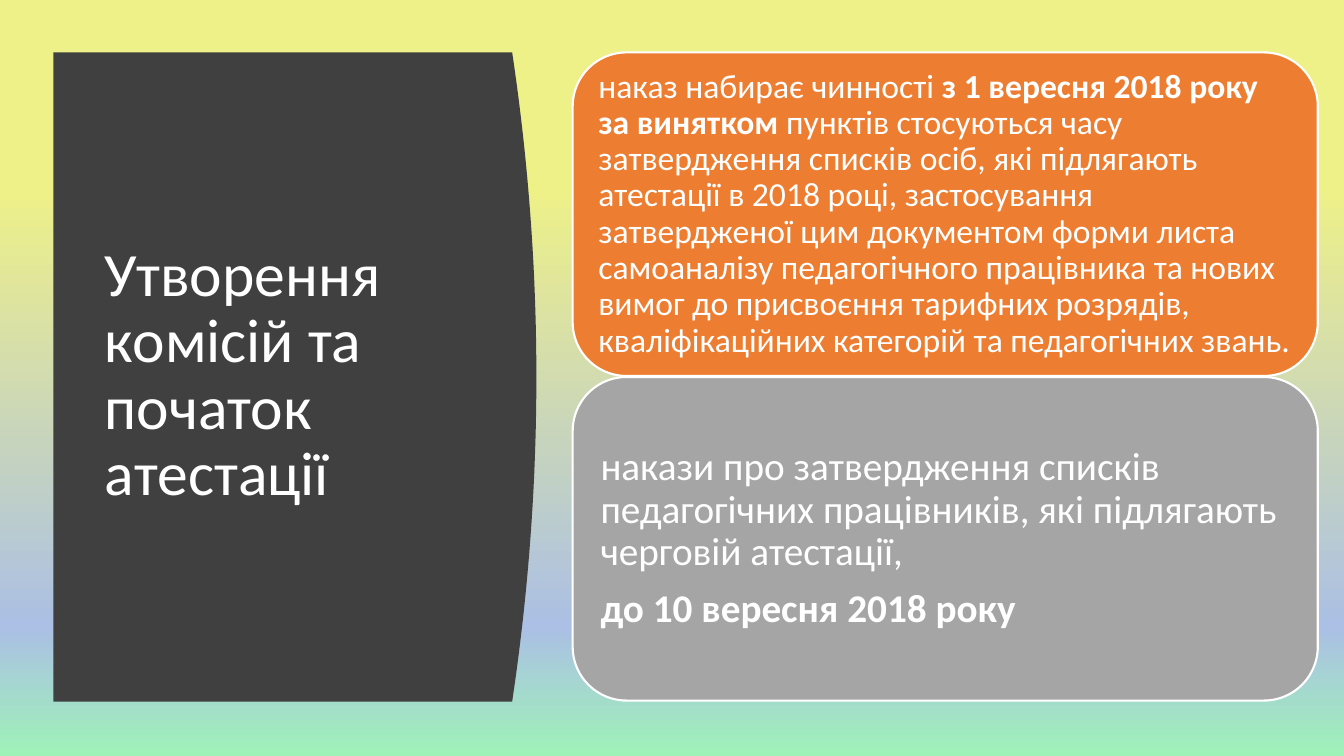
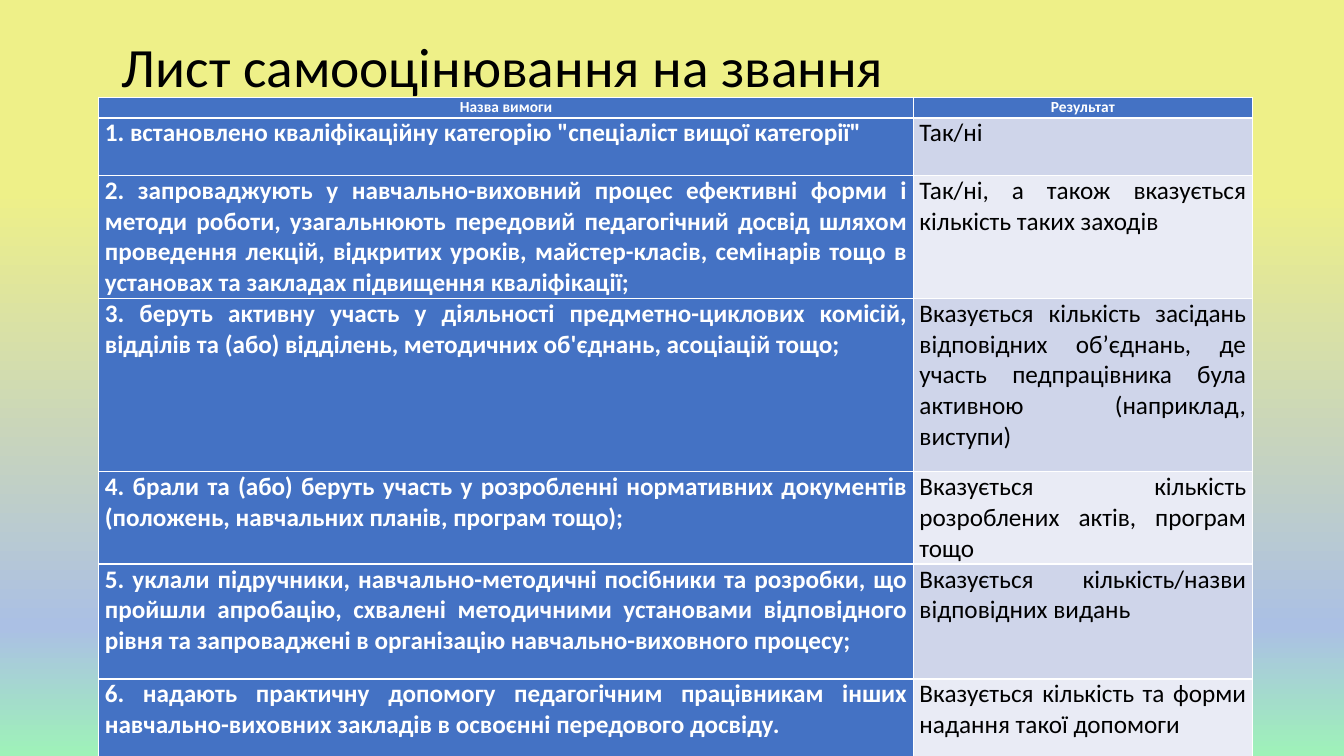
"""Build two slides on teacher attestation: commissions and the self-assessment sheet."""
from lxml import etree
from pptx import Presentation
from pptx.dml.color import RGBColor
from pptx.enum import shapes, text
from pptx.oxml import ns
from pptx.util import Inches, Pt

FONT = "Calibri"
WHITE, BLACK, DARK = "FFFFFF", "000000", "404040"
ORANGE, GREY, BLUE = "ED7D31", "A5A5A5", "4472C4"
BANDS = ["CFD5EA", "E9EBF5"]
BACKGROUND = [(25, "EEF088"), (83, "ABC0E4"), (100, "9EF2B8")]


def rgb(value):
    return RGBColor.from_string(value)


def style(p, size, color, align=text.PP_ALIGN.LEFT, bold=None):
    p.alignment = align
    p.font.name = FONT
    p.font.size = Pt(size)
    p.font.bold = bold
    p.font.color.rgb = rgb(color)


prs = Presentation()
prs.slide_width, prs.slide_height = Inches(13.33), Inches(7.5)

fill = prs.slide_master.background.fill
fill.gradient()
fill.gradient_angle = 270
stops = next(prs.slide_master.element.iter(ns.qn("a:gsLst")))
for stop in list(stops):
    stops.remove(stop)
for position, color in BACKGROUND:
    stop = etree.SubElement(stops, ns.qn("a:gs"), pos=str(position * 1000))
    etree.SubElement(stop, ns.qn("a:srgbClr"), val=color)

titles = [
    ("Утворення комісій та початок атестації", (0.94, 1.11, 3.74, 5.24), 44, WHITE),
    ("Лист самооцінювання на звання", (1.11, 0.4, 11.31, 0.57), 39.6, BLACK),
]
slides = []
for title, box, size, color in titles:
    s = prs.slides.add_slide(prs.slide_layouts[5])
    sp = s.shapes.title
    sp.left, sp.top, sp.width, sp.height = [Inches(v) for v in box]
    tf = sp.text_frame
    tf.text = title
    tf.word_wrap = True
    tf.auto_size = text.MSO_AUTO_SIZE.NONE
    tf.vertical_anchor = text.MSO_ANCHOR.MIDDLE
    style(tf.paragraphs[0], size, color)
    tf.paragraphs[0].line_spacing = 0.9
    slides.append(s)
commissions, sheet = slides

left, edge, bulge, top, bottom = 0.53, 5.08, 0.24, 0.52, 6.96
steps = 40
curve = []
for i in range(steps + 1):
    t = i / steps
    x = edge + bulge * 4 * t * (1 - t)
    curve.append((Inches(x), Inches(top + (bottom - top) * t)))
builder = commissions.shapes.build_freeform(Inches(left), Inches(top))
builder.add_line_segments(curve + [(Inches(left), Inches(bottom))], close=True)
panel = builder.convert_to_shape()
panel.shadow.inherit = False
panel.fill.solid()
panel.fill.fore_color.rgb = rgb(DARK)
panel.line.fill.background()
tree = commissions.shapes.title.element.getparent()
tree.remove(panel.element)
tree.insert(2, panel.element)

cards = [
    (ORANGE, 24, 0.1, [[
        ("наказ набирає чинності ", False),
        ("з 1 вересня 2018 року за винятком", True),
        (" пунктів стосуються часу затвердження списків осіб, які підлягають атестації "
         "в 2018 році, застосування затвердженої цим документом форми листа самоаналізу "
         "педагогічного працівника та нових вимог до присвоєння тарифних розрядів, "
         "кваліфікаційних категорій та педагогічних звань.", False),
    ]]),
    (GREY, 28, 0.12, [
        [("накази про затвердження списків педагогічних працівників, які підлягають "
          "черговій атестації,", False)],
        [("до 10 вересня 2018 року", True)],
    ]),
]
for i, (color, size, inset, paragraphs) in enumerate(cards):
    sp = commissions.shapes.add_shape(
        shapes.MSO_SHAPE.ROUNDED_RECTANGLE,
        Inches(5.68), Inches(0.52 + 3.22 * i), Inches(7.39), Inches(3.21))
    sp.shadow.inherit = False
    sp.fill.solid()
    sp.fill.fore_color.rgb = rgb(color)
    sp.line.color.rgb = rgb(WHITE)
    sp.line.width = Pt(1.5)
    tf = sp.text_frame
    tf.word_wrap = True
    tf.vertical_anchor = text.MSO_ANCHOR.MIDDLE
    tf.margin_left = tf.margin_right = tf.margin_top = tf.margin_bottom = Inches(inset)
    for j, runs in enumerate(paragraphs):
        p = tf.add_paragraph() if j else tf.paragraphs[0]
        style(p, size, WHITE)
        p.line_spacing = 0.9
        p.space_after = Pt(10)
        for words, bold in runs:
            r = p.add_run()
            r.text = words
            r.font.bold = bold

rows = [
    (0.2, "Назва вимоги", "Результат"),
    (0.57, "1. встановлено кваліфікаційну категорію \"спеціаліст вищої категорії\"",
     "Так/ні"),
    (1.18, "2. запроваджують у навчально-виховний процес ефективні форми і методи роботи, "
     "узагальнюють передовий педагогічний досвід шляхом проведення лекцій, відкритих "
     "уроків, майстер-класів, семінарів тощо в установах та закладах підвищення "
     "кваліфікації;",
     "Так/ні, а також вказується кількість таких заходів"),
    (1.72, "3. беруть активну участь у діяльності предметно-циклових комісій, відділів та "
     "(або) відділень, методичних об'єднань, асоціацій тощо;",
     "Вказується кількість засідань відповідних об’єднань, де участь педпрацівника була "
     "активною (наприклад, виступи)"),
    (0.86, "4. брали та (або) беруть участь у розробленні нормативних документів "
     "(положень, навчальних планів, програм тощо);",
     "Вказується кількість розроблених актів, програм тощо"),
    (1.14, "5. уклали підручники, навчально-методичні посібники та розробки, що пройшли "
     "апробацію, схвалені методичними установами відповідного рівня та запроваджені в "
     "організацію навчально-виховного процесу;",
     "Вказується кількість/назви відповідних видань"),
    (0.86, "6. надають практичну допомогу педагогічним працівникам інших "
     "навчально-виховних закладів в освоєнні передового досвіду.",
     "Вказується кількість та форми надання такої допомоги"),
]
table = sheet.shapes.add_table(
    len(rows), 2, Inches(0.98), Inches(0.97), Inches(11.44),
    Inches(sum(row[0] for row in rows))).table
table.first_col = True
for column, width in zip(table.columns, (8.08, 3.36)):
    column.width = Inches(width)
for i, (height, *texts) in enumerate(rows):
    table.rows[i].height = Inches(height)
    for j, words in enumerate(texts):
        head = i == 0 or j == 0
        cell = table.cell(i, j)
        cell.margin_left = cell.margin_right = Inches(0.06)
        cell.margin_top = cell.margin_bottom = 0
        cell.fill.solid()
        cell.fill.fore_color.rgb = rgb(BLUE if head else BANDS[(i - 1) % 2])
        cell.text = words
        style(cell.text_frame.paragraphs[0], 18 if i else 11, WHITE if head else BLACK,
              text.PP_ALIGN.JUSTIFY if i else text.PP_ALIGN.CENTER, head)

prs.save("out.pptx")
